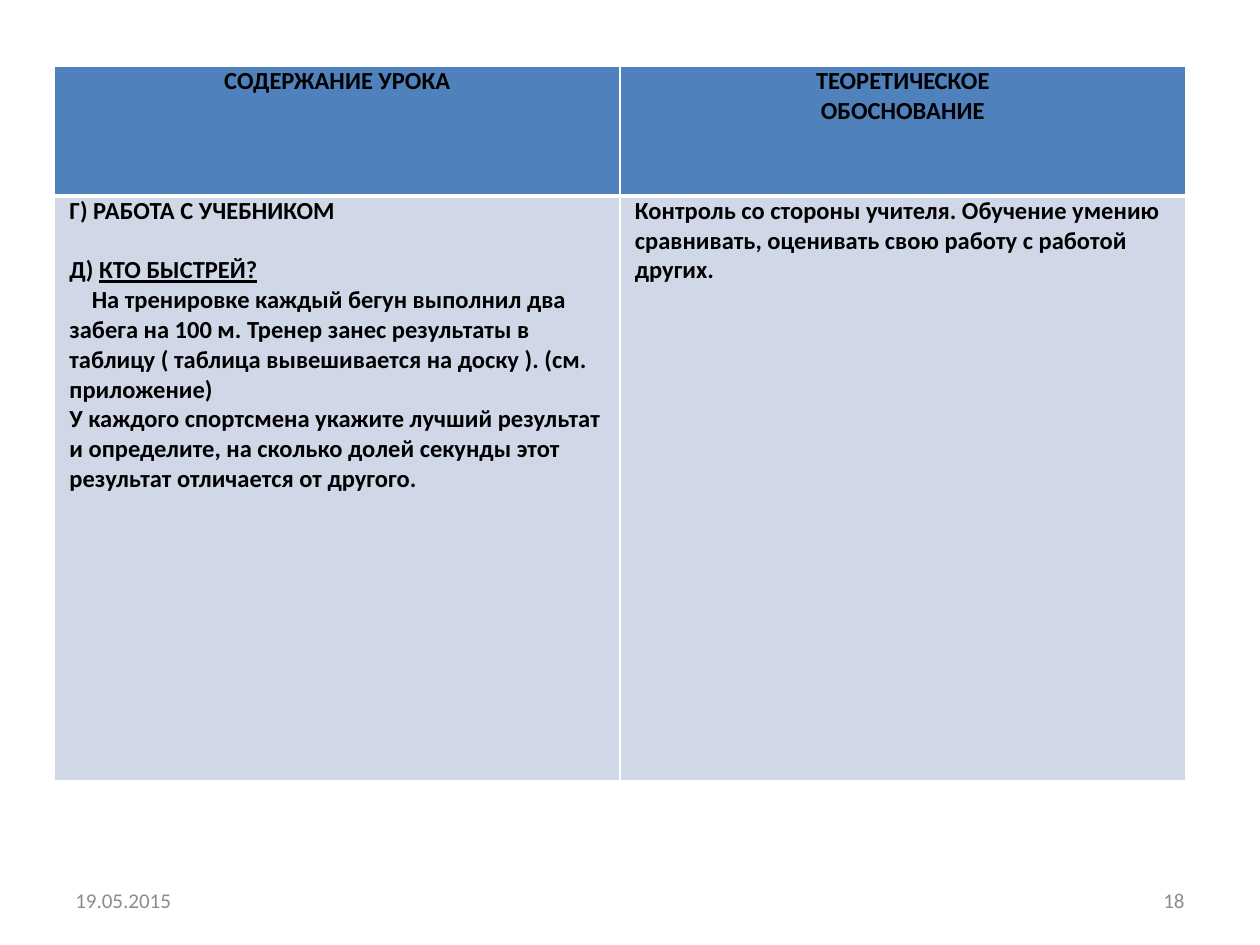
from dataclasses import dataclass

import lxml.etree
import pptx
import pptx.dml.color
import pptx.enum.text
import pptx.oxml.ns
import pptx.util
from pptx.util import Cm, Pt

WHITE = pptx.dml.color.RGBColor(0xFF, 0xFF, 0xFF)
BLACK = pptx.dml.color.RGBColor(0x00, 0x00, 0x00)
HEADER_BLUE = pptx.dml.color.RGBColor(0x4F, 0x81, 0xBD)
BODY_BLUE = pptx.dml.color.RGBColor(0xD0, 0xD8, 0xE8)
FOOTER_GREY = pptx.dml.color.RGBColor(0x8C, 0x8C, 0x8C)
FONT = "Calibri"
ALIGN = pptx.enum.text.PP_ALIGN


@dataclass(frozen=True)
class Line:
    text: str
    underlined: str = ""
    space_before: float = 0
    indent: float = 0


@dataclass(frozen=True)
class RowStyle:
    height: float
    fill: pptx.dml.color.RGBColor
    align: ALIGN
    margin: float
    bottom_border: float


@dataclass(frozen=True)
class FooterItem:
    text: str
    left: float
    align: ALIGN


HEADER = RowStyle(2.62, HEADER_BLUE, ALIGN.CENTER, 0.18, 3)
BODY = RowStyle(11.78, BODY_BLUE, ALIGN.LEFT, 0.3, 1)

LESSON = [
    (HEADER, [
        [Line("СОДЕРЖАНИЕ УРОКА")],
        [Line("ТЕОРЕТИЧЕСКОЕ"), Line("ОБОСНОВАНИЕ")],
    ]),
    (BODY, [
        [
            Line("Г) РАБОТА С УЧЕБНИКОМ"),
            Line("Д) ", underlined="КТО БЫСТРЕЙ?", space_before=17),
            Line("На тренировке каждый бегун выполнил два забега на 100 м. "
                 "Тренер занес результаты в таблицу ( таблица вывешивается "
                 "на доску ). (см. приложение)", indent=0.45),
            Line("У каждого спортсмена укажите лучший результат и определите, "
                 "на сколько долей секунды этот результат отличается от другого."),
        ],
        [
            Line("Контроль со стороны учителя. Обучение умению сравнивать, "
                 "оценивать свою работу с работой других."),
        ],
    ]),
]

FOOTER = [
    FooterItem("19.05.2015", 1.27, ALIGN.LEFT),
    FooterItem("18", 18.2, ALIGN.RIGHT),
]


def set_borders(cell, bottom_width: float) -> None:
    properties = cell._tc.get_or_add_tcPr()
    widths = {"lnL": 1, "lnR": 1, "lnT": 1, "lnB": bottom_width}
    for position, (side, width) in enumerate(widths.items()):
        border = lxml.etree.Element(pptx.oxml.ns.qn(f"a:{side}"), w=str(Pt(width)))
        fill = lxml.etree.SubElement(border, pptx.oxml.ns.qn("a:solidFill"))
        lxml.etree.SubElement(fill, pptx.oxml.ns.qn("a:srgbClr"), val=str(WHITE))
        properties.insert(position, border)


def style_paragraph(paragraph, align: ALIGN, size: float,
                    color: pptx.dml.color.RGBColor, bold: bool) -> None:
    paragraph.alignment = align
    paragraph.font.name = FONT
    paragraph.font.size = Pt(size)
    paragraph.font.bold = bold
    paragraph.font.color.rgb = color


def fill_cell(cell, lines: list[Line], style: RowStyle) -> None:
    cell.fill.solid()
    cell.fill.fore_color.rgb = style.fill
    cell.margin_left = cell.margin_right = Cm(style.margin)
    cell.margin_top = cell.margin_bottom = 0
    set_borders(cell, style.bottom_border)
    for index, line in enumerate(lines):
        frame = cell.text_frame
        paragraph = frame.add_paragraph() if index else frame.paragraphs[0]
        paragraph.add_run().text = line.text
        if line.underlined:
            game = paragraph.add_run()
            game.text = line.underlined
            game.font.underline = True
        if line.space_before:
            paragraph.space_before = Pt(line.space_before)
        if line.indent:
            paragraph._p.get_or_add_pPr().set("indent", str(Cm(line.indent)))
        style_paragraph(paragraph, style.align, 14, BLACK, True)


def add_lesson_table(slide) -> None:
    height = sum(style.height for style, _ in LESSON)
    table = slide.shapes.add_table(
        2, 2, Cm(1.1), Cm(1.33), Cm(22.8), Cm(height)).table
    table.first_row = table.horz_banding = False
    for row, (style, cells) in enumerate(LESSON):
        table.rows[row].height = Cm(style.height)
        for column, lines in enumerate(cells):
            fill_cell(table.cell(row, column), lines, style)


def add_footer_item(slide, item: FooterItem) -> None:
    frame = slide.shapes.add_textbox(
        Cm(item.left), Cm(17.65), Cm(5.93), Cm(1.01)).text_frame
    frame.word_wrap = True
    frame.vertical_anchor = pptx.enum.text.MSO_ANCHOR.MIDDLE
    frame.text = item.text
    style_paragraph(frame.paragraphs[0], item.align, 12, FOOTER_GREY, False)


def main() -> None:
    presentation = pptx.Presentation()
    presentation.slide_width = Cm(25.4)
    presentation.slide_height = Cm(19.05)
    slide = presentation.slides.add_slide(presentation.slide_layouts[6])
    add_lesson_table(slide)
    for item in FOOTER:
        add_footer_item(slide, item)
    presentation.save("out.pptx")


if __name__ == "__main__":
    main()
